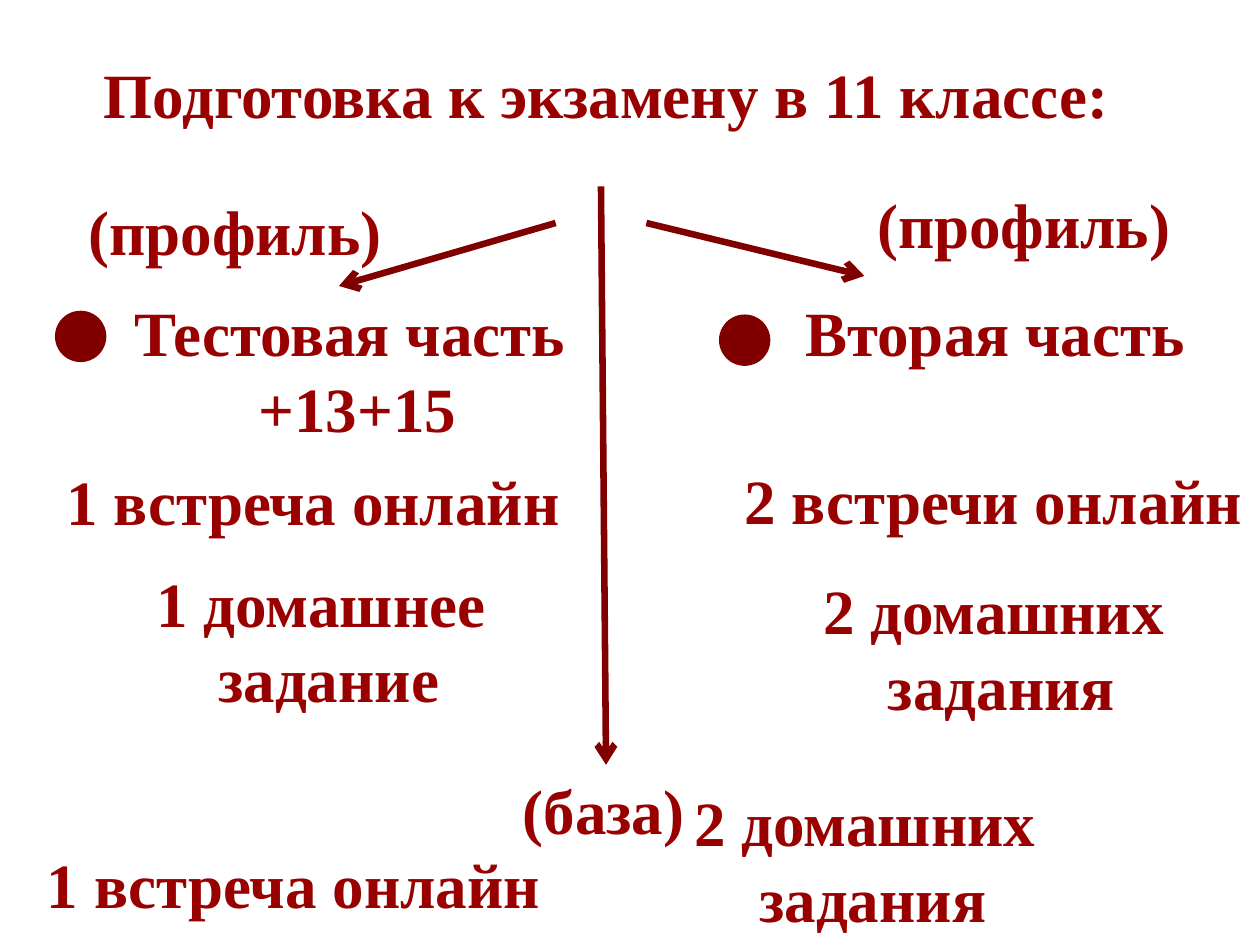
from pptx import Presentation
from pptx.dml.color import RGBColor
from pptx.enum import shapes, text
from pptx.oxml.ns import qn
from pptx.util import Inches, Pt
from lxml import etree

COLORS = {"text": "990000", "mark": "800000"}
FONT = "Times New Roman"
LINE_H, PADDING = 0.6, 0.11  # text box height = lines * LINE_H + PADDING
DOT = 0.38

# Text blocks: left, top, width, lines
BLOCKS = [
    # Left branch
    (0.59, 1.48, 2.55, ["(профиль)"]),
    (0.95, 2.28, 3.65, ["Тестовая часть", " +13+15"]),
    (0.41, 3.62, 4.15, ["1 встреча онлайн"]),
    (1.13, 4.43, 2.96, ["1 домашнее ", "задание"]),
    # Right branch
    (6.85, 1.42, 2.55, ["(профиль)"]),
    (6.28, 2.28, 3.36, ["Вторая часть "]),
    (5.81, 3.61, 4.15, ["2 встречи онлайн"]),
    (6.42, 4.49, 2.93, ["2 домашних", " задания"]),
    # Bottom branch
    (4.04, 6.07, 1.5, ["(база)"]),
    (0.25, 6.66, 4.16, ["1 встреча онлайн"]),
    (5.4, 6.17, 2.93, ["2 домашних", " задания"]),
]
DOTS = [(0.45, 2.48), (5.72, 2.51)]
ARROWS = [
    (4.41, 1.77, 2.69, 2.27),
    (5.13, 1.77, 6.86, 2.19),
    (4.77, 1.48, 4.81, 6.07),
]


def rgb(name):
    return RGBColor.from_string(COLORS[name])


def write(sp, lines, size=36, bold=True, color="text"):
    tf = sp.text_frame
    tf.word_wrap = False
    tf.auto_size = text.MSO_AUTO_SIZE.SHAPE_TO_FIT_TEXT
    tf.vertical_anchor = text.MSO_ANCHOR.TOP
    for i, line in enumerate(lines):
        p = tf.paragraphs[0] if i == 0 else tf.add_paragraph()
        p.alignment = text.PP_ALIGN.CENTER
        r = p.add_run()
        r.text = line
        r.font.name, r.font.size, r.font.bold = FONT, Pt(size), bold
        r.font.color.rgb = rgb(color)


def add_title(slide, left, top, width, line):
    sp = slide.shapes.title
    sp.left, sp.top, sp.width = Inches(left), Inches(top), Inches(width)
    sp.height = Inches(LINE_H + PADDING)
    write(sp, [line])


def add_block(slide, left, top, width, lines):
    height = len(lines) * LINE_H + PADDING
    box = slide.shapes.add_textbox(*map(Inches, (left, top, width, height)))
    write(box, lines)


def add_dot(slide, left, top):
    sp = slide.shapes.add_shape(
        shapes.MSO_SHAPE.OVAL, *map(Inches, (left, top, DOT, DOT)))
    sp.shadow.inherit = False
    sp.fill.solid()
    sp.fill.fore_color.rgb = rgb("mark")
    sp.line.color.rgb = rgb("mark")
    sp.line.width = Pt(2)


def add_arrow(slide, *ends):
    line = slide.shapes.add_connector(
        shapes.MSO_CONNECTOR.STRAIGHT, *map(Inches, ends))
    line.line.color.rgb = rgb("mark")
    line.line.width = Pt(3.75)
    ln = line.line._get_or_add_ln()
    etree.SubElement(ln, qn("a:tailEnd"), type="arrow")
    etree.SubElement(line._element.spPr, qn("a:effectLst"))


def main():
    prs = Presentation()
    prs.slide_width, prs.slide_height = Inches(10), Inches(7.5)
    slide = prs.slides.add_slide(prs.slide_layouts[5])  # title only

    add_title(slide, 0.68, 0.39, 8.26, "Подготовка к экзамену в 11 классе:")
    for dot in DOTS:
        add_dot(slide, *dot)
    for arrow in ARROWS:
        add_arrow(slide, *arrow)
    for block in BLOCKS:
        add_block(slide, *block)

    prs.save("out.pptx")


if __name__ == "__main__":
    main()
